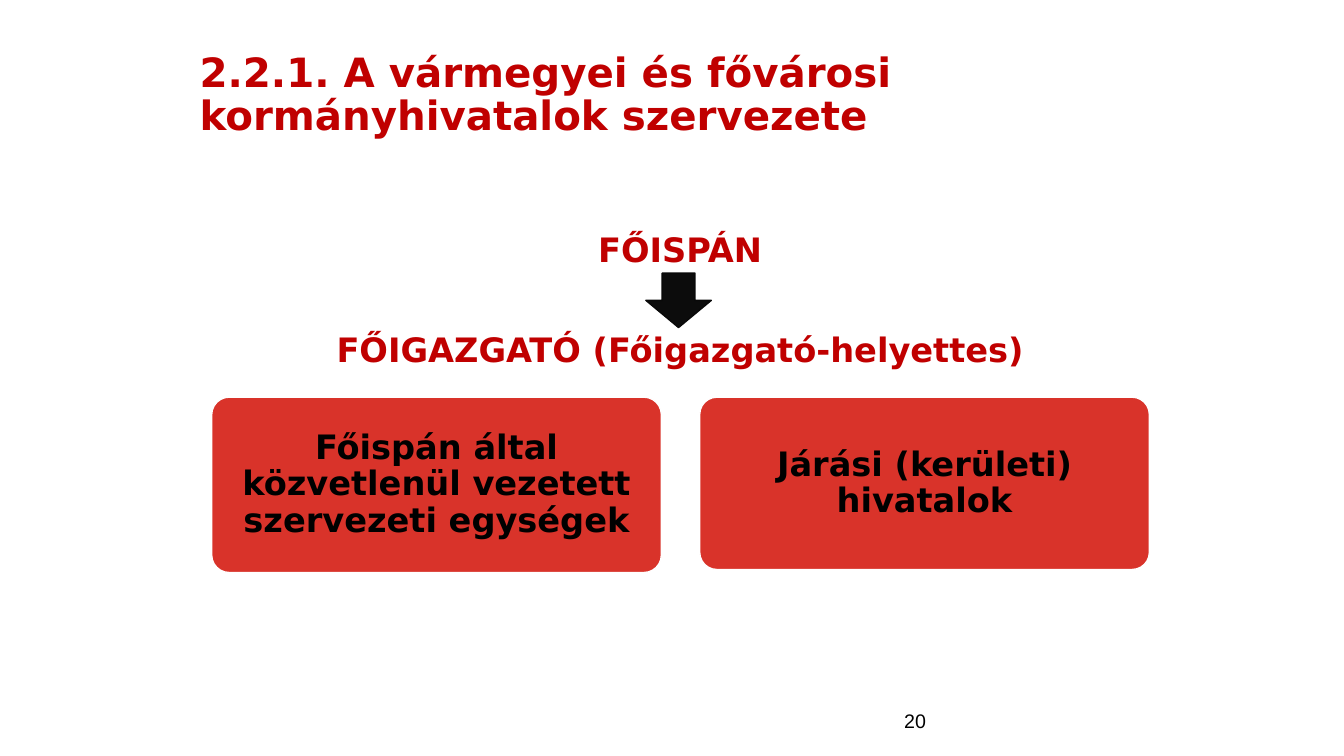
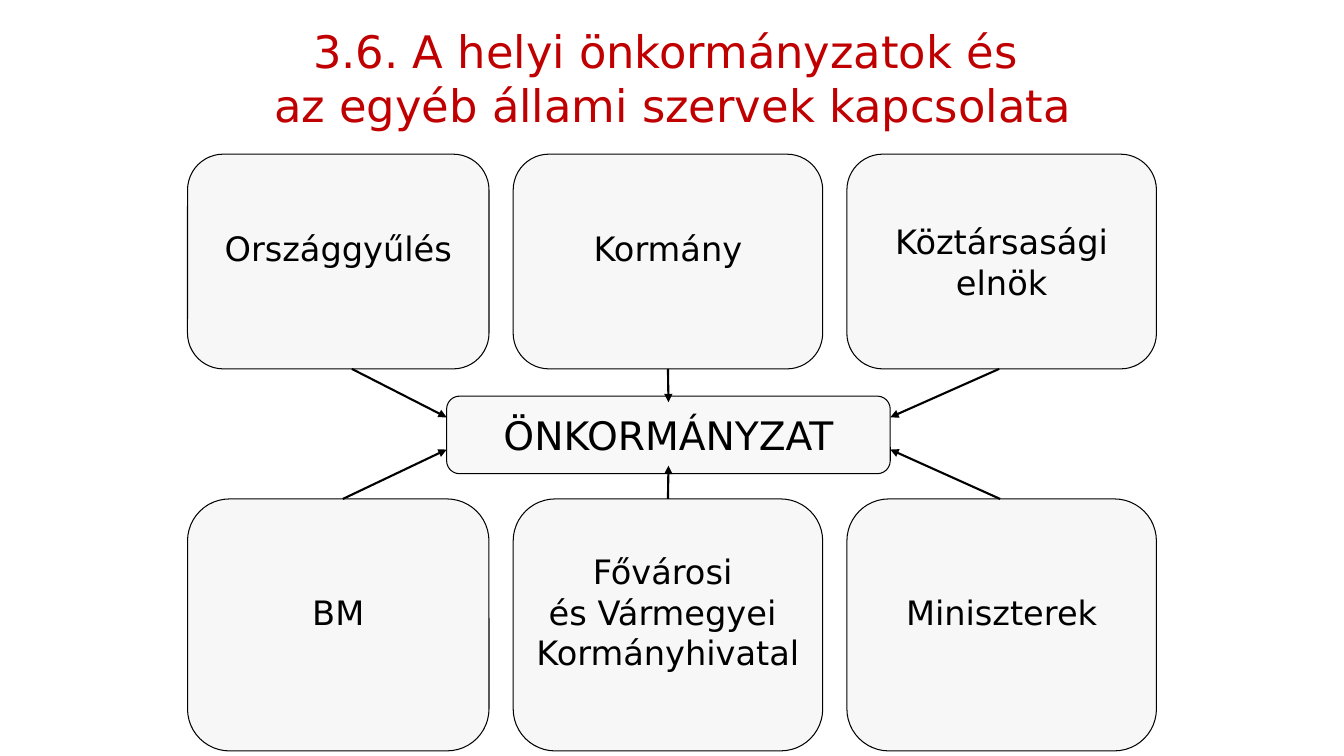
import pptx
import pptx.dml.color
import pptx.enum.shapes
import pptx.enum.text
import pptx.oxml.ns
import pptx.util
from lxml import etree

Inches = pptx.util.Inches
Pt = pptx.util.Pt
SHAPE = pptx.enum.shapes.MSO_SHAPE
ALIGN = pptx.enum.text.PP_ALIGN
MIDDLE = pptx.enum.text.MSO_ANCHOR.MIDDLE
qn = pptx.oxml.ns.qn

FONT = "DejaVu Sans"
TITLE_RED, BOX_RED = "C00000", "D9332A"
BLACK, WHITE, PALE, HUB_GREY = "000000", "FFFFFF", "F7F7F7", "F2F2F2"
TOP, BOTTOM = 0, 2


def color(value):
    return pptx.dml.color.RGBColor.from_string(value)


def write(box, lines, size, ink=BLACK, bold=False, align=ALIGN.CENTER,
          spacing=None, font=FONT, wrap=True):
    """Fill the box with one paragraph per line, centred vertically."""
    frame = box.text_frame
    frame.word_wrap = wrap
    frame.vertical_anchor = MIDDLE
    for index, line in enumerate(lines):
        para = frame.add_paragraph() if index else frame.paragraphs[0]
        para.alignment = align
        para.line_spacing = spacing
        span = para.add_run()
        span.text = line
        span.font.name = font
        span.font.size = Pt(size)
        span.font.bold = bold
        span.font.color.rgb = color(ink)
    return frame


def place_title(page, area, lines, size, **style):
    title = page.shapes.title
    title.left, title.top, title.width, title.height = map(Inches, area)
    frame = write(title, lines, size, TITLE_RED, **style)
    frame.auto_size = pptx.enum.text.MSO_AUTO_SIZE.NONE


def add_label(page, area, text, size, **style):
    write(page.shapes.add_textbox(*map(Inches, area)), [text], size, **style)


def add_block(page, kind, area, fill, line, line_width):
    block = page.shapes.add_shape(kind, *map(Inches, area))
    block.shadow.inherit = False
    block.fill.solid()
    block.fill.fore_color.rgb = color(fill)
    block.line.color.rgb = color(line)
    block.line.width = Pt(line_width)
    return block


def add_arrow(page, start, end):
    arrow = page.shapes.add_connector(
        pptx.enum.shapes.MSO_CONNECTOR.STRAIGHT, *map(Inches, start + end))
    arrow.line.color.rgb = color(BLACK)
    arrow.line.width = Pt(1.5)
    etree.SubElement(arrow.line._get_or_add_ln(), qn("a:tailEnd"), type="triangle")
    etree.SubElement(arrow._element.spPr, qn("a:effectLst"))
    return arrow


def add_leaders(page, left, top, width):
    """Two ranks of leaders with an arrow between them."""
    style = dict(ink=TITLE_RED, bold=True)
    add_label(page, (left, top, width, 0.5), "FŐISPÁN", 24, **style)
    add_label(page, (left, top + 0.99, width, 0.5),
              "FŐIGAZGATÓ (Főigazgató-helyettes)", 24, **style)
    add_block(page, SHAPE.DOWN_ARROW, (left + width / 2 - 0.34, top + 0.49, 0.65, 0.54),
              "0C0C0C", "090909", 1)


def add_units(page, left, top, width, gap):
    units = [("Főispán által közvetlenül vezetett szervezeti egységek", 1.74),
             ("Járási (kerületi) hivatalok", 1.71)]
    for index, (text, height) in enumerate(units):
        area = (left + index * (width + gap), top, width, height)
        unit = add_block(page, SHAPE.ROUNDED_RECTANGLE, area, BOX_RED, WHITE, 1)
        unit.adjustments[0] = 0.1
        frame = write(unit, [text], 24, bold=True, spacing=0.9)
        frame.margin_left = frame.margin_right = Inches(0.15)


def add_hub(page, area):
    hub = add_block(page, SHAPE.ROUNDED_RECTANGLE, area, HUB_GREY, BLACK, 0.75)
    fill = hub._element.spPr.find(qn("a:solidFill"))
    etree.SubElement(fill[0], qn("a:alpha"), val="50000")
    write(hub, ["ÖNKORMÁNYZAT"], 28, wrap=False)


def add_body_row(page, top, height, bodies):
    """A row of state bodies; each is (lines, space kept below the text)."""
    columns = [(1.86, 2.99), (5.09, 3.07), (8.4, 3.07)]
    row = []
    for (left, width), (lines, space_below) in zip(columns, bodies):
        body = add_block(page, SHAPE.ROUNDED_RECTANGLE, (left, top, width, height),
                         PALE, BLACK, 0.75)
        frame = write(body, lines, 24, wrap=False)
        frame.margin_bottom = Inches(0.05 + space_below)
        row.append(body)
    return row


def join_row(page, row, side, edge, starts, target, middle_target):
    """Point a row at the hub: outer bodies at its sides, the middle one into it."""
    hub_left, hub_right = 4.43, 8.83
    for start, end in zip(starts, (hub_left, hub_right)):
        add_arrow(page, (start, edge), (end, target))
    middle = add_arrow(page, (6.63, edge), (6.63, middle_target))
    middle.begin_connect(row[1], side)


def build_office_page(page):
    place_title(page, (1.88, 0.45, 9.69, 1),
                ["2.2.1. A vármegyei és fővárosi", "kormányhivatalok szervezete"],
                28.8, bold=True, align=ALIGN.LEFT, spacing=0.9)
    add_leaders(page, 2.19, 2.22, 9.11)
    add_units(page, 2.1, 3.94, 4.46, 0.38)
    add_label(page, (8.87, 6.89, 2.33, 0.52), "20", 14, align=ALIGN.LEFT, font="Arial")


def build_relations_page(page):
    place_title(page, (2.58, 0.18, 8.19, 1.18),
                ["3.6. A helyi önkormányzatok és ",
                 "az egyéb állami szervek kapcsolata"], 32)
    add_hub(page, (4.43, 3.93, 4.4, 0.77))
    upper = add_body_row(page, 1.53, 2.13, [
        (["Országgyűlés"], 0.26),
        (["Kormány"], 0.26),
        (["Köztársasági", "elnök"], 0)])
    lower = add_body_row(page, 4.95, 2.5, [
        (["BM"], 0.26),
        (["Fővárosi ", "és Vármegyei ", "Kormányhivatal"], 0.26),
        (["Miniszterek"], 0.26)])
    join_row(page, upper, BOTTOM, 3.66, (3.49, 9.91), 4.14, 3.99)
    join_row(page, lower, TOP, 4.95, (3.4, 9.92), 4.46, 4.62)


def main():
    deck = pptx.Presentation()
    deck.slide_width, deck.slide_height = Inches(13.33), Inches(7.5)
    title_only = deck.slide_layouts[5]
    for build in (build_office_page, build_relations_page):
        build(deck.slides.add_slide(title_only))
    deck.save("out.pptx")


if __name__ == "__main__":
    main()
